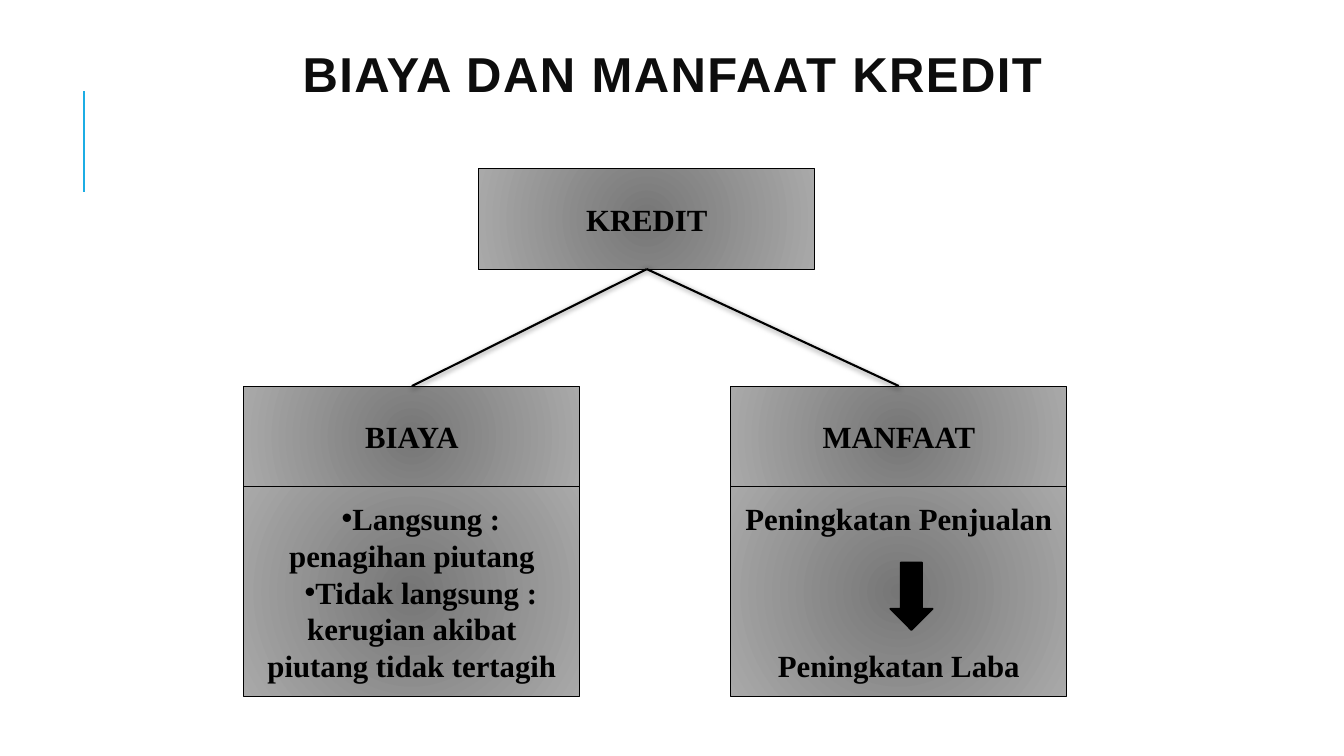
from dataclasses import dataclass

from lxml import etree
from pptx import Presentation
from pptx.dml.color import RGBColor
from pptx.enum.shapes import MSO_CONNECTOR, MSO_SHAPE
from pptx.enum.text import MSO_ANCHOR, PP_ALIGN
from pptx.oxml import parse_xml
from pptx.oxml.ns import nsdecls, qn
from pptx.shapes.autoshape import Shape
from pptx.shapes.connector import Connector
from pptx.slide import Slide
from pptx.text.text import TextFrame
from pptx.util import Inches, Pt

RECT, DOWN_ARROW = MSO_SHAPE.RECTANGLE, MSO_SHAPE.DOWN_ARROW
STRAIGHT = MSO_CONNECTOR.STRAIGHT
CENTER, MIDDLE = PP_ALIGN.CENTER, MSO_ANCHOR.MIDDLE
BOTTOM_SITE, TOP_SITE = 2, 0


@dataclass(frozen=True)
class Theme:
    black: str = "000000"
    title: str = "0D0D0D"
    accent: str = "1CADE4"
    box_center: str = "767676"
    box_edge: str = "A9A9A9"
    title_font: str = "Arial"
    box_font: str = "Times New Roman"
    title_size: float = 35
    box_size: float = 22
    box_leading: float = 26.4


@dataclass(frozen=True)
class Box:
    left: float
    top: float
    height: float
    lines: tuple[str, ...]
    bullets: bool = False
    gap: float = 0


THEME = Theme()
BOX_WIDTH, HEAD_HEIGHT, BODY_HEIGHT = 3.33, 1, 2.08
HEAD_TOP = 3.83
BODY_TOP = HEAD_TOP + HEAD_HEIGHT
COST_LEFT, BENEFIT_LEFT = 2.42, 7.25

CREDIT = Box(4.75, 1.67, HEAD_HEIGHT, ("KREDIT",))
HEADS = (
    Box(BENEFIT_LEFT, HEAD_TOP, HEAD_HEIGHT, ("MANFAAT",)),
    Box(COST_LEFT, HEAD_TOP, HEAD_HEIGHT, ("BIAYA",)),
)
BODIES = (
    Box(COST_LEFT, BODY_TOP, BODY_HEIGHT,
        ("Langsung : penagihan piutang",
         "Tidak langsung : kerugian akibat piutang tidak tertagih"), bullets=True),
    Box(BENEFIT_LEFT, BODY_TOP, BODY_HEIGHT,
        ("Peningkatan Penjualan", "Peningkatan Laba"), gap=3 * THEME.box_leading),
)


def add_text(tf: TextFrame, lines: tuple[str, ...], *, font: str, size: float,
             color: str, leading: float | Pt, gap: float = 0,
             spacing: int = 0, bullets: bool = False) -> None:
    """Fill a text frame with bold, centred paragraphs."""
    tf.word_wrap = True
    tf.vertical_anchor = MIDDLE
    for i, text in enumerate(lines):
        p = tf.add_paragraph() if i else tf.paragraphs[0]
        p.alignment = CENTER
        p.line_spacing = leading
        if i and gap:
            p.space_before = Pt(gap)
        r = p.add_run()
        r.text = text
        r.font.name, r.font.size, r.font.bold = font, Pt(size), True
        r.font.color.rgb = RGBColor.from_string(color)
        if spacing:
            r.font._element.set("spc", str(spacing))
        if bullets:
            props = p._p.get_or_add_pPr()
            props.set("marL", "0")
            props.set("indent", str(Inches(0.18)))
            etree.SubElement(props, qn("a:buFont"), typeface="Arial")
            etree.SubElement(props, qn("a:buChar"), char="•")


def add_box(s: Slide, box: Box) -> Shape:
    """Draw a rectangle with a round gradient and its text."""
    sp = s.shapes.add_shape(RECT, Inches(box.left), Inches(box.top),
                            Inches(BOX_WIDTH), Inches(box.height))
    sp.shadow.inherit = False
    sp.fill.gradient()
    for stop, color in zip(sp.fill.gradient_stops, (THEME.box_center, THEME.box_edge)):
        stop.color.rgb = RGBColor.from_string(color)
    grad = sp._element.spPr.find(qn("a:gradFill"))
    grad.replace(grad.find(qn("a:lin")), parse_xml(
        f'<a:path {nsdecls("a")} path="circle">'
        '<a:fillToRect l="50000" t="50000" r="50000" b="50000"/></a:path>'))
    sp.line.color.rgb = RGBColor.from_string(THEME.black)
    sp.line.width = Pt(0.75)
    add_text(sp.text_frame, box.lines, font=THEME.box_font, size=THEME.box_size,
             color=THEME.black, leading=Pt(THEME.box_leading), gap=box.gap,
             bullets=box.bullets)
    return sp


def add_line(s: Slide, start: tuple[float, float], end: tuple[float, float],
             color: str, shadow: bool = False) -> Connector:
    """Draw a straight line, with a soft shadow if asked."""
    line = s.shapes.add_connector(STRAIGHT, *map(Inches, start + end))
    line.line.color.rgb = RGBColor.from_string(color)
    line.line.width = Pt(1.5)
    effects = etree.SubElement(line._element.spPr, qn("a:effectLst"))
    if shadow:
        effects.append(parse_xml(
            f'<a:outerShdw {nsdecls("a")} blurRad="{Pt(4)}" dist="{Pt(1)}" dir="5400000" '
            f'rotWithShape="0"><a:srgbClr val="{THEME.black}"><a:alpha val="50000"/>'
            '</a:srgbClr></a:outerShdw>'))
    return line


def add_arrow(s: Slide) -> None:
    """Draw the arrow from sales growth to profit growth."""
    sp = s.shapes.add_shape(DOWN_ARROW, Inches(8.83), Inches(5.58),
                            Inches(0.42), Inches(0.67))
    sp.shadow.inherit = False
    sp.fill.solid()
    sp.fill.fore_color.rgb = RGBColor.from_string(THEME.black)
    sp.line.color.rgb = RGBColor.from_string(THEME.black)
    sp.line.width = Pt(1.25)


def main() -> None:
    """Build and save the slide."""
    prs = Presentation()
    prs.slide_width, prs.slide_height = Inches(13.33), Inches(7.5)
    s = prs.slides.add_slide(prs.slide_layouts[6])

    add_line(s, (0.83, 1.9), (0.83, 0.9), THEME.accent)
    title = s.shapes.add_textbox(Inches(2.17), Inches(0.3), Inches(9), Inches(0.95))
    add_text(title.text_frame, ("BIAYA DAN MANFAAT KREDIT",), font=THEME.title_font,
             size=THEME.title_size, color=THEME.title, leading=0.8, spacing=100)

    credit = add_box(s, CREDIT)
    heads = [add_box(s, box) for box in HEADS]
    for box in BODIES:
        add_box(s, box)
    add_arrow(s)

    half = BOX_WIDTH / 2
    start = (CREDIT.left + half, CREDIT.top + CREDIT.height)
    for box, head in zip(reversed(HEADS), reversed(heads)):
        line = add_line(s, start, (box.left + half, box.top), THEME.black, shadow=True)
        line.begin_connect(credit, BOTTOM_SITE)
        line.end_connect(head, TOP_SITE)

    prs.save("out.pptx")


if __name__ == "__main__":
    main()
